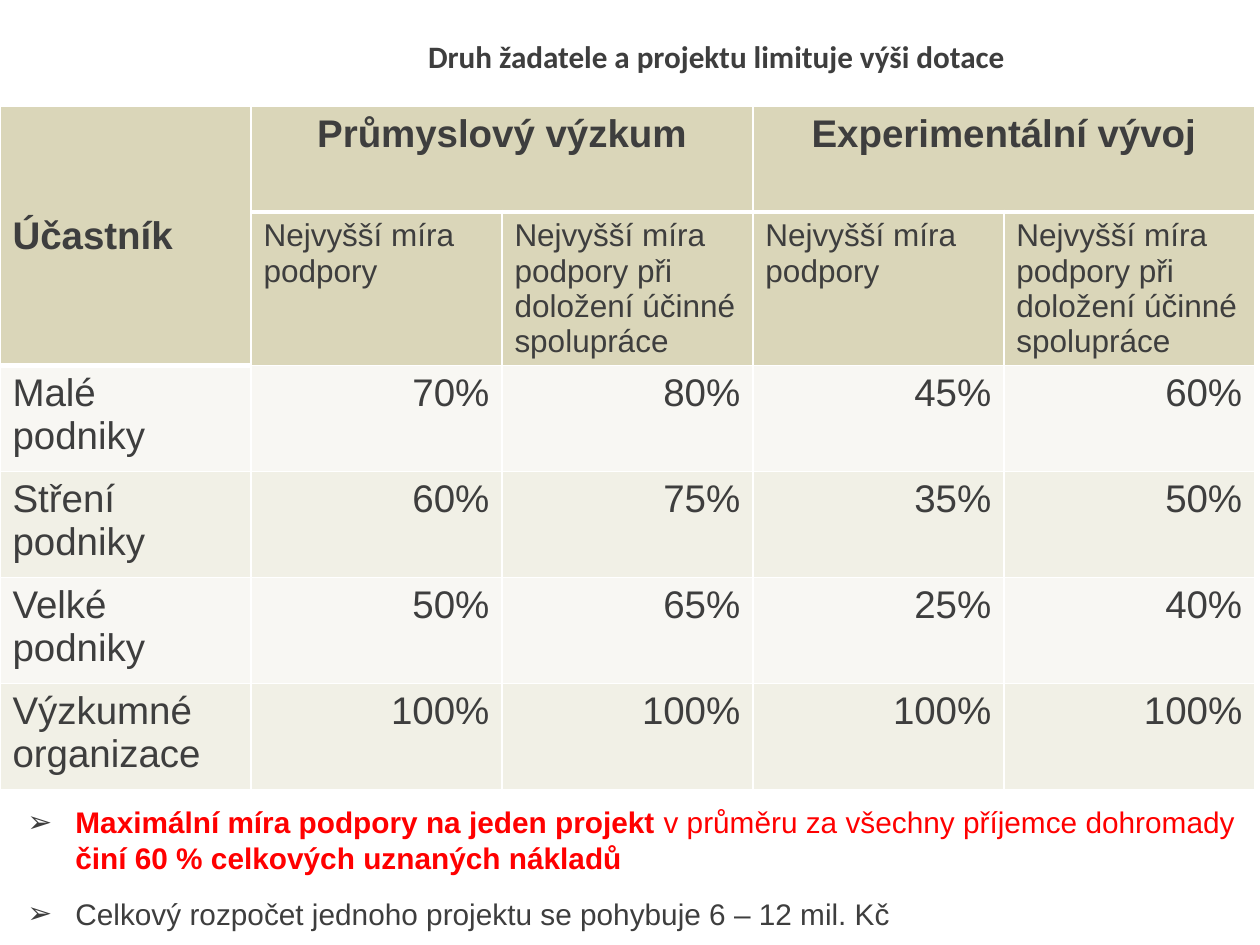
from lxml.etree import SubElement
from pptx import Presentation
from pptx.dml.color import RGBColor
from pptx.enum.text import MSO_ANCHOR, PP_ALIGN
from pptx.oxml import parse_xml
from pptx.oxml.ns import nsdecls, qn
from pptx.util import Pt

PX = 914400 // 126
DARK = RGBColor(0x3E, 0x3E, 0x3E)
RED = RGBColor(0xFF, 0x00, 0x00)
HEADER = RGBColor(0xDA, 0xD6, 0xB9)
BANDS = [RGBColor(0xF8, 0xF7, 0xF3), RGBColor(0xF1, 0xF0, 0xE6)]

TITLE = "Druh žadatele a projektu limituje výši dotace"
BASIC = "Nejvyšší míra podpory"
COOPERATION = "Nejvyšší míra podpory při doložení účinné spolupráce"
ROWS = [
    ["Účastník", "Průmyslový výzkum", "", "Experimentální vývoj", ""],
    ["", BASIC, COOPERATION, BASIC, COOPERATION],
    ["Malé podniky", "70%", "80%", "45%", "60%"],
    ["Stření podniky", "60%", "75%", "35%", "50%"],
    ["Velké podniky", "50%", "65%", "25%", "40%"],
    ["Výzkumné organizace", "100%", "100%", "100%", "100%"],
]
MERGES = [((0, 0), (1, 0)), ((0, 1), (0, 2)), ((0, 3), (0, 4))]
COL_W, ROW_H, SUBHEAD_H = 251, 106, 152
# Each note: colour, then (text, bold) runs
NOTES = [
    (RED, [("Maximální míra podpory na jeden projekt ", True),
           ("v průměru za všechny příjemce dohromady ", False),
           ("činí 60 % celkových uznaných nákladů", True)]),
    (DARK, [("Celkový rozpočet jednoho projektu se pohybuje 6 – 12 mil. Kč", False)]),
]


def px(*values):
    return [v * PX for v in values]


def set_font(font, name, size, color, bold):
    font.name, font.size, font.bold = name, Pt(size), bold
    font.color.rgb = color


def set_borders(cell, bottom):
    """White lines, 1 pt except for the bottom one."""
    tc_pr = cell._tc.get_or_add_tcPr()
    for i, (side, width) in enumerate(zip("LRTB", (1, 1, 1, bottom))):
        tc_pr.insert(i, parse_xml(
            f'<a:ln{side} {nsdecls("a")} w="{Pt(width)}"><a:solidFill>'
            f'<a:srgbClr val="FFFFFF"/></a:solidFill></a:ln{side}>'))


def add_bullet(p, indent):
    p_pr = p._p.get_or_add_pPr()
    p_pr.set("marL", str(indent))
    p_pr.set("indent", str(-indent))
    color = SubElement(p_pr, qn("a:buClr"))
    SubElement(color, qn("a:srgbClr"), val=str(DARK))
    SubElement(p_pr, qn("a:buFont"), typeface="Arial")
    SubElement(p_pr, qn("a:buChar"), char="➢")


def add_title(slide):
    s = slide.shapes.title
    s.left, s.top, s.width, s.height = px(372, 27, 645, 59)
    tf = s.text_frame
    tf.text = TITLE
    tf.vertical_anchor = MSO_ANCHOR.MIDDLE
    p = tf.paragraphs[0]
    p.alignment = PP_ALIGN.RIGHT
    set_font(p.font, "Calibri", 17.8, DARK, True)


def add_support_table(slide):
    n_rows, n_cols = len(ROWS), len(ROWS[0])
    height = ROW_H * (n_rows - 1) + SUBHEAD_H
    table = slide.shapes.add_table(
        n_rows, n_cols, *px(0, 106, COL_W * n_cols, height)).table
    for col in table.columns:
        col.width = COL_W * PX
    for r, row in enumerate(ROWS):
        table.rows[r].height = (SUBHEAD_H if r == 1 else ROW_H) * PX
        for c, text in enumerate(row):
            cell = table.cell(r, c)
            cell.fill.solid()
            cell.fill.fore_color.rgb = HEADER if r < 2 else BANDS[r % 2]
            set_borders(cell, 3 if r == 0 or (r, c) == (1, 0) else 1)
            cell.text = text
            p = cell.text_frame.paragraphs[0]
            if c and r != 1:
                p.alignment = PP_ALIGN.CENTER if r == 0 else PP_ALIGN.RIGHT
            set_font(p.font, "Arial", 18 if r == 1 and c else 22, DARK, r == 0)
    for first, last in MERGES:
        table.cell(*first).merge(table.cell(*last))
    table.cell(0, 0).vertical_anchor = MSO_ANCHOR.MIDDLE


def add_notes(slide):
    tf = slide.shapes.add_textbox(*px(15, 798, 1235, 152)).text_frame
    tf.word_wrap = True
    for i, (color, runs) in enumerate(NOTES):
        p = tf.add_paragraph() if i else tf.paragraphs[0]
        add_bullet(p, 48 * PX)
        if i:
            p.space_before = Pt(11.5)
        for text, bold in runs:
            run = p.add_run()
            run.text = text
            set_font(run.font, "Arial", 17, color, bold)


def main():
    prs = Presentation()
    prs.slide_width, prs.slide_height = px(1260, 945)
    slide = prs.slides.add_slide(prs.slide_layouts[5])
    add_support_table(slide)
    add_notes(slide)
    add_title(slide)
    prs.save("out.pptx")


if __name__ == "__main__":
    main()
